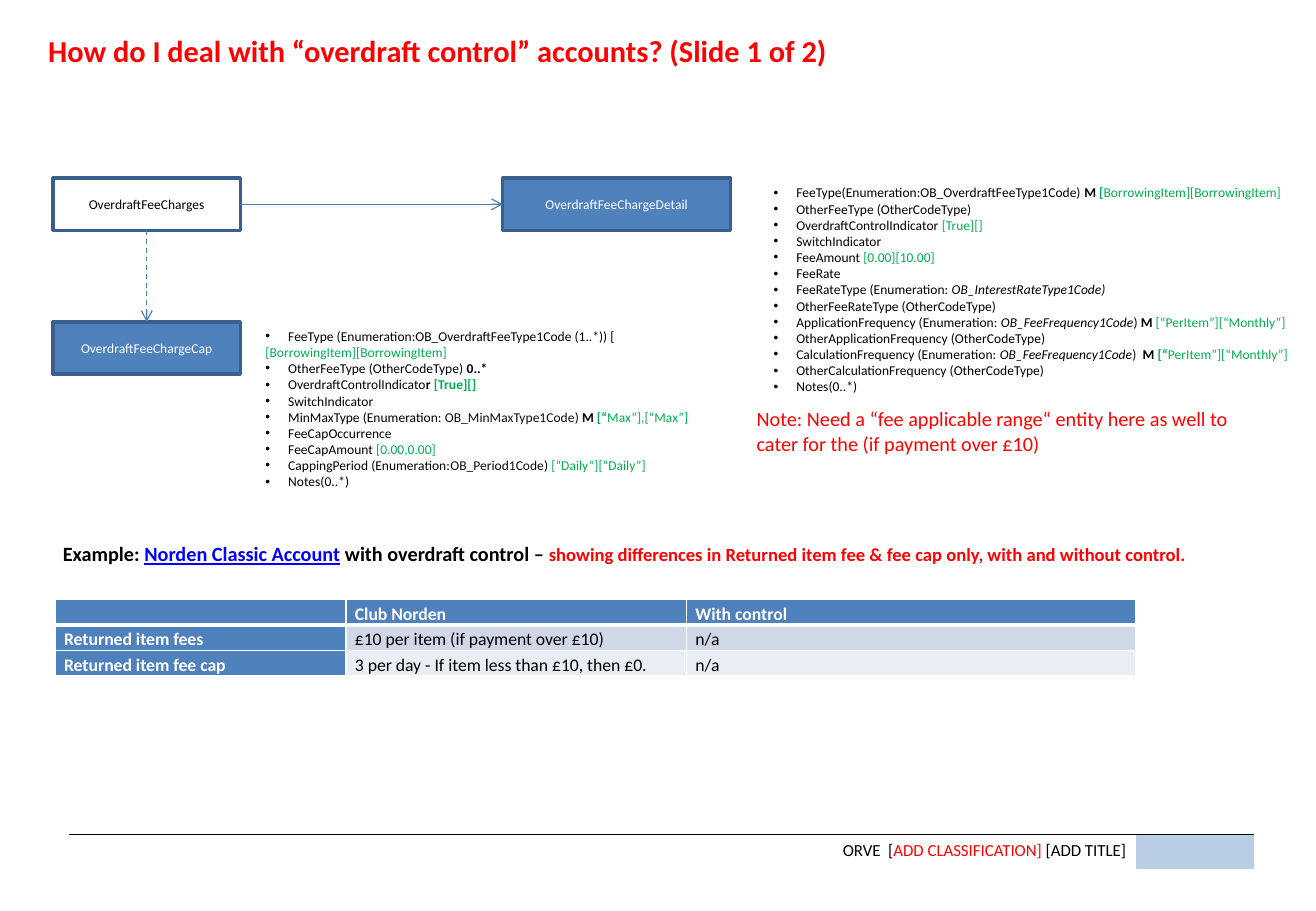
from lxml.etree import SubElement
from pptx import Presentation
from pptx.dml.color import RGBColor
from pptx.enum.dml import MSO_LINE_DASH_STYLE as Dash
from pptx.enum.shapes import MSO_CONNECTOR as Connector, MSO_SHAPE as Shape
from pptx.enum.text import MSO_ANCHOR as Anchor, MSO_AUTO_SIZE as AutoSize, PP_ALIGN as Align
from pptx.oxml.ns import qn
from pptx.util import Pt

BLACK, WHITE, RED, GREEN, BLUE = "000000", "FFFFFF", "FF0000", "00B050", "4F81BD"
SOFT_BLACK = "0D0D0D"
BOTTOM, LEFT, RIGHT, TOP = 2, 1, 3, 0

DETAIL_FIELDS = [
    [("FeeType(Enumeration:OB_OverdraftFeeType1Code) ",), ("M ", BLACK, "b"),
     ("[", GREEN, "b"), ("BorrowingItem][BorrowingItem]", GREEN)],
    [("OtherFeeType (OtherCodeType)",)],
    [("OverdraftControlIndicator ",), ("[True][]", GREEN)],
    [("SwitchIndicator",)],
    [("FeeAmount ",), ("[0.00][10.00]", GREEN)],
    [("FeeRate",)],
    [("FeeRateType (Enumeration: ",), ("OB_InterestRateType1Code)", BLACK, "i")],
    [("OtherFeeRateType (OtherCodeType)",)],
    [("ApplicationFrequency (Enumeration: ",), ("OB_FeeFrequency1Code", BLACK, "i"), (") ",),
     ("M ", BLACK, "b"), ("[“PerItem”][“Monthly”]", GREEN)],
    [("OtherApplicationFrequency (OtherCodeType)",)],
    [("CalculationFrequency (Enumeration: ",), ("OB_FeeFrequency1Code", BLACK, "i"), (")  ",),
     ("M ", BLACK, "b"), ("[“", GREEN, "b"), ("PerItem”][“Monthly”]", GREEN)],
    [("OtherCalculationFrequency (OtherCodeType)",)],
    [("Notes(0..*)",)],
]
CAP_FIELDS_START = [[("FeeType (Enumeration:OB_OverdraftFeeType1Code (1..*)) [",)]]
CAP_FIELDS_WRAP = [[("[BorrowingItem][BorrowingItem]", GREEN)]]
CAP_FIELDS_REST = [
    [("OtherFeeType (OtherCodeType) ",), ("0..*", BLACK, "b")],
    [("OverdraftControlIndicato",), ("r ", BLACK, "b"), ("[True][]", GREEN, "b")],
    [("SwitchIndicator",)],
    [("MinMaxType (Enumeration: ",), ("OB_MinMaxType1Code", SOFT_BLACK), (") ",),
     ("M ", BLACK, "b"), ("[“", GREEN, "b"), ("Max”],[“Max”]", GREEN)],
    [("FeeCapOccurrence",)],
    [("FeeCapAmount ",), ("[0.00,0.00]", GREEN)],
    [("CappingPeriod (Enumeration:",), ("OB_Period1Code", SOFT_BLACK), (") ",),
     ("[“Daily”][“Daily”]", GREEN)],
    [("Notes(0..*)",)],
]
FEE_ROWS = [
    ["", "Club Norden", "With control"],
    ["Returned item fees", "£10 per item (if payment over £10)", "n/a"],
    ["Returned item fee cap", "3 per day - If item less than £10, then £0.", "n/a"],
]


def paint(target, colour):
    """Give a fill a solid colour."""
    target.solid()
    target.fore_color.rgb = RGBColor.from_string(colour)


def write(para, spans, size, colour=BLACK, bold=False):
    """Write spans of (text, colour, flags) into a paragraph with a base font."""
    font = para.font
    font.name, font.size, font.bold = "Calibri", Pt(size), bold
    paint(font.fill, colour)
    for text, *style in spans:
        span = para.add_run()
        span.text = text
        if style:
            paint(span.font.fill, style[0])
        for flag in "".join(style[1:]):
            setattr(span.font, {"b": "bold", "i": "italic", "u": "underline"}[flag], True)


def add_bullet(para):
    """Hang a round bullet before a paragraph."""
    props = para._p.get_or_add_pPr()
    props.set("marL", str(Pt(13.5)))
    props.set("indent", str(-Pt(13.5)))
    SubElement(props, qn("a:buFont"), typeface="Arial")
    SubElement(props, qn("a:buChar"), char="•")


def add_text(page, left, top, width, height, wrap=True):
    """Add an empty text box and return its frame."""
    frame = page.shapes.add_textbox(Pt(left), Pt(top), Pt(width), Pt(height)).text_frame
    frame.word_wrap = wrap
    frame.auto_size = AutoSize.SHAPE_TO_FIT_TEXT
    return frame


def add_fields(frame, fields, bulleted=True):
    """Append field lines to a frame."""
    for spans in fields:
        first = frame.paragraphs[0]
        para = frame.add_paragraph() if first.runs else first
        if bulleted:
            add_bullet(para)
        write(para, spans, 8)


def add_entity(page, name, left, top, width, fill=None):
    """Add the rectangle of one entity."""
    box = page.shapes.add_shape(Shape.RECTANGLE, Pt(left), Pt(top), Pt(width), Pt(31))
    box.shadow.inherit = False
    if fill:
        paint(box.fill, fill)
    else:
        box.fill.background()
    paint(box.line.fill, "3A5F8C")
    box.line.width = Pt(2)
    box.text_frame.vertical_anchor = Anchor.MIDDLE
    para = box.text_frame.paragraphs[0]
    para.alignment = Align.CENTER
    write(para, [(name,)], 8, WHITE if fill else BLACK)
    return box


def add_arrow(page, start, start_side, end, end_side, dash=None):
    """Join two entities with an open arrow."""
    arrow = page.shapes.add_connector(Connector.STRAIGHT, 0, 0, 0, 0)
    arrow.begin_connect(start, start_side)
    arrow.end_connect(end, end_side)
    paint(arrow.line.fill, "4B7EBC")
    arrow.line.width = Pt(0.75)
    if dash:
        arrow.line.dash_style = dash
    SubElement(arrow.line._get_or_add_ln(), qn("a:tailEnd"), type="arrow")
    SubElement(arrow._element.spPr, qn("a:effectLst"))


def set_borders(cell, **borders):
    """Set cell sides given as L, R, T, B=(colour, width) and clear the others."""
    props = cell._tc.get_or_add_tcPr()
    for side in "LRTB":
        colour, width = borders.get(side, (None, 0))
        line = SubElement(props, qn(f"a:ln{side}"), w=str(Pt(width)))
        if colour:
            SubElement(SubElement(line, qn("a:solidFill")), qn("a:srgbClr"), val=colour)
        else:
            SubElement(line, qn("a:noFill"))


def add_grid(page, left, top, widths, row_height, row_count):
    """Add a table without banding."""
    frame = page.shapes.add_table(row_count, len(widths), Pt(left), Pt(top),
                                  Pt(sum(widths)), Pt(row_height * row_count))
    grid = frame.table
    grid.first_row = grid.horz_banding = False
    for column, width in zip(grid.columns, widths):
        column.width = Pt(width)
    return grid


def add_footer(page):
    """Add the ruled footer with its tinted end cell."""
    grid = add_grid(page, 41.2, 494.8, [632, 70], 20.2, 1)
    label, tint = grid.cell(0, 0), grid.cell(0, 1)
    for cell in (label, tint):
        set_borders(cell, T=(BLACK, 1))
        cell.margin_left = cell.margin_right = Pt(5.8)
    label.fill.background()
    paint(tint.fill, "B9CDE5")
    para = label.text_frame.paragraphs[0]
    para.alignment = Align.RIGHT
    write(para, [("ORVE  [",), ("ADD CLASSIFICATION] ", RED), ("[ADD TITLE]",)], 10)
    write(tint.text_frame.paragraphs[0], [], 10)


def add_fee_table(page):
    """Add the table comparing fees with and without control."""
    grid = add_grid(page, 32.7, 355.3, [172.4, 201.8, 266.4], 15.1, len(FEE_ROWS))
    for row, texts in enumerate(FEE_ROWS):
        for column, text in enumerate(texts):
            cell = grid.cell(row, column)
            thin, thick = (WHITE, 1), (WHITE, 3)
            set_borders(cell, L=thin, R=thin, T=thick if row == 1 else thin,
                        B=thick if row == 0 else thin)
            heading = row == 0 or column == 0
            paint(cell.fill, BLUE if heading else ("D0D8E8", "E9EDF4")[row - 1])
            cell.margin_left = cell.margin_right = Pt(5.3)
            cell.margin_top = cell.margin_bottom = 0
            para = cell.text_frame.paragraphs[0]
            para.line_spacing, para.space_after = 1.2, Pt(10)
            write(para, [(text,)] if text else [], 10.5, WHITE if heading else BLACK, heading)


def main():
    """Build the slide and save it."""
    deck = Presentation()
    deck.slide_width, deck.slide_height = Pt(780), Pt(540)
    page = deck.slides.add_slide(deck.slide_layouts[6])
    add_footer(page)

    title = add_text(page, 21.5, 15.3, 481, 29, wrap=False)
    write(title.paragraphs[0], [("How do I deal with “overdraft control” accounts? (Slide 1 of 2)",)],
          18, RED, True)

    charges = add_entity(page, "OverdraftFeeCharges", 31.5, 105.6, 111)
    detail = add_entity(page, "OverdraftFeeChargeDetail", 298, 105.6, 135, BLUE)
    cap = add_entity(page, "OverdraftFeeChargeCap", 31.5, 190.8, 111, BLUE)
    add_arrow(page, charges, BOTTOM, cap, TOP, Dash.DASH)
    add_arrow(page, charges, RIGHT, detail, LEFT)

    add_fields(add_text(page, 451.4, 105.8, 322.6, 133.2, wrap=False), DETAIL_FIELDS)
    cap_list = add_text(page, 150.3, 190.8, 268.6, 104.4, wrap=False)
    add_fields(cap_list, CAP_FIELDS_START)
    add_fields(cap_list, CAP_FIELDS_WRAP, bulleted=False)
    add_fields(cap_list, CAP_FIELDS_REST)

    example = add_text(page, 30.2, 317.5, 740, 22)
    para = example.paragraphs[0]
    write(para, [("Example: ",), ("Norden Classic Account", "0000FF", "u"),
                 (" with overdraft control – ",),
                 ("showing differences in Returned item fee & fee cap only, with and without control.", RED)],
          12, bold=True)
    para.runs[-1].font.size = Pt(11)

    note = add_text(page, 441.4, 237.6, 311.8, 36)
    write(note.paragraphs[0], [("Note: Need a “fee applicable range“ entity here as well to "
                                "cater for the (if payment over £10)",)], 12, RED)
    add_fee_table(page)
    deck.save("out.pptx")


if __name__ == "__main__":
    main()
